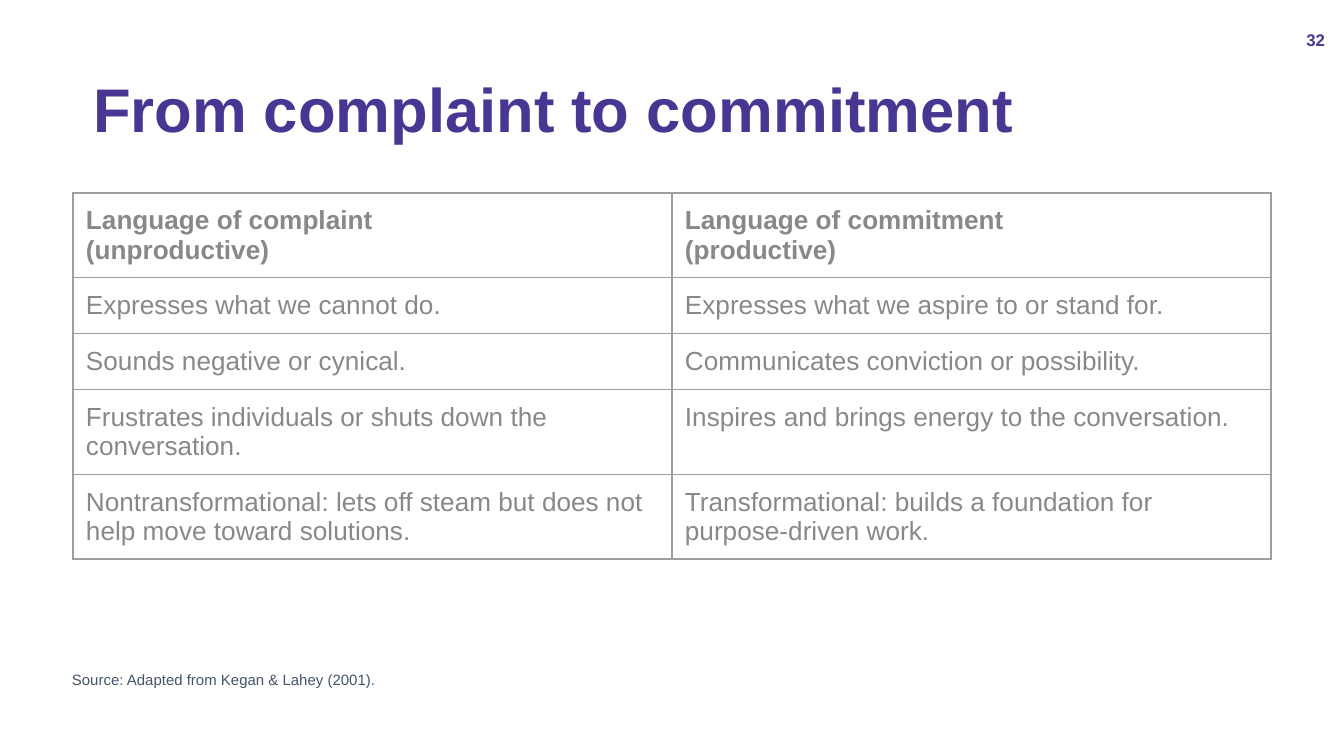
from lxml import etree
from pptx import Presentation
from pptx import util as u
from pptx.dml.color import RGBColor
from pptx.enum import text
from pptx.oxml.ns import qn

PX = 914400 / 134.4
PURPLE, GREY, SLATE, RULE = "483692", "888888", "44546A", "9E9E9E"
ROWS = [
    ("Language of complaint\n(unproductive)", "Language of commitment\n(productive)"),
    ("Expresses what we cannot do.", "Expresses what we aspire to or stand for."),
    ("Sounds negative or cynical.", "Communicates conviction or possibility."),
    ("Frustrates individuals or shuts down the conversation.",
     "Inspires and brings energy to the conversation."),
    ("Nontransformational: lets off steam but does not help move toward solutions.",
     "Transformational: builds a foundation for purpose-driven work."),
]


def px(length):
    return u.Emu(round(length * PX))


def color(value):
    return RGBColor.from_string(value)


def style(para, size, value, bold=False):
    font = para.font
    font.name, font.size, font.bold = "Arial", u.Pt(size), bold
    font.color.rgb = color(value)


def set_margins(holder, left, top, right, bottom):
    holder.margin_left, holder.margin_top = px(left), px(top)
    holder.margin_right, holder.margin_bottom = px(right), px(bottom)


def fill_frame(shape, words, size, value, bold=False, left=0,
               anchor=text.MSO_ANCHOR.MIDDLE):
    frame = shape.text_frame
    frame.word_wrap = True
    frame.auto_size = text.MSO_AUTO_SIZE.NONE
    frame.vertical_anchor = anchor
    set_margins(frame, left, 5, 9, 5)
    frame.text = words
    para = frame.paragraphs[0]
    style(para, size, value, bold)
    return para


def add_title(page, box):
    title = page.shapes.title
    title.left, title.top, title.width, title.height = map(px, box)
    para = fill_frame(title, "From complaint to commitment", 33, PURPLE, True)
    para.alignment = text.PP_ALIGN.LEFT
    para.line_spacing = 0.9


def add_number(page, box):
    number = page.shapes.add_textbox(*map(px, box))
    para = fill_frame(number, "32", 9, PURPLE, True, left=9)
    para.alignment = text.PP_ALIGN.RIGHT


def add_source(page, box):
    source = page.shapes.add_textbox(*map(px, box))
    para = fill_frame(source, "Source: Adapted from Kegan & Lahey (2001).", 8, SLATE,
                      anchor=text.MSO_ANCHOR.TOP)
    para.line_spacing = 0.9
    para.space_after = u.Pt(5)


def add_borders(cell):
    props = cell._tc.get_or_add_tcPr()
    for position, side in enumerate(("a:lnL", "a:lnR", "a:lnT", "a:lnB")):
        line = etree.Element(qn(side), w=str(u.Pt(0.75)))
        paint = etree.SubElement(line, qn("a:solidFill"))
        etree.SubElement(paint, qn("a:srgbClr"), val=RULE)
        props.insert(position, line)


def add_comparison(page, box):
    holder = page.shapes.add_table(len(ROWS), 2, *map(px, box))
    table = holder.table
    table.horz_banding = False
    # Rows start one line high and grow with their text
    for row in table.rows:
        row.height = px(56)
    holder.height = px(box[3])
    for r, row in enumerate(ROWS):
        for c, words in enumerate(row):
            cell = table.cell(r, c)
            cell.text = words
            set_margins(cell, 13, 13, 13, 13)
            cell.fill.background()
            add_borders(cell)
            for para in cell.text_frame.paragraphs:
                style(para, 14, GREY, bold=r == 0)


def main():
    deck = Presentation()
    deck.slide_width, deck.slide_height = px(1344), px(756)
    page = deck.slides.add_slide(deck.slide_layouts[5])
    add_title(page, (93, 40, 1158, 146))
    add_comparison(page, (73, 193, 1198, 370))
    add_number(page, (1278, 20, 56, 40))
    add_source(page, (72, 668, 570, 68))
    deck.save("out.pptx")


if __name__ == "__main__":
    main()
